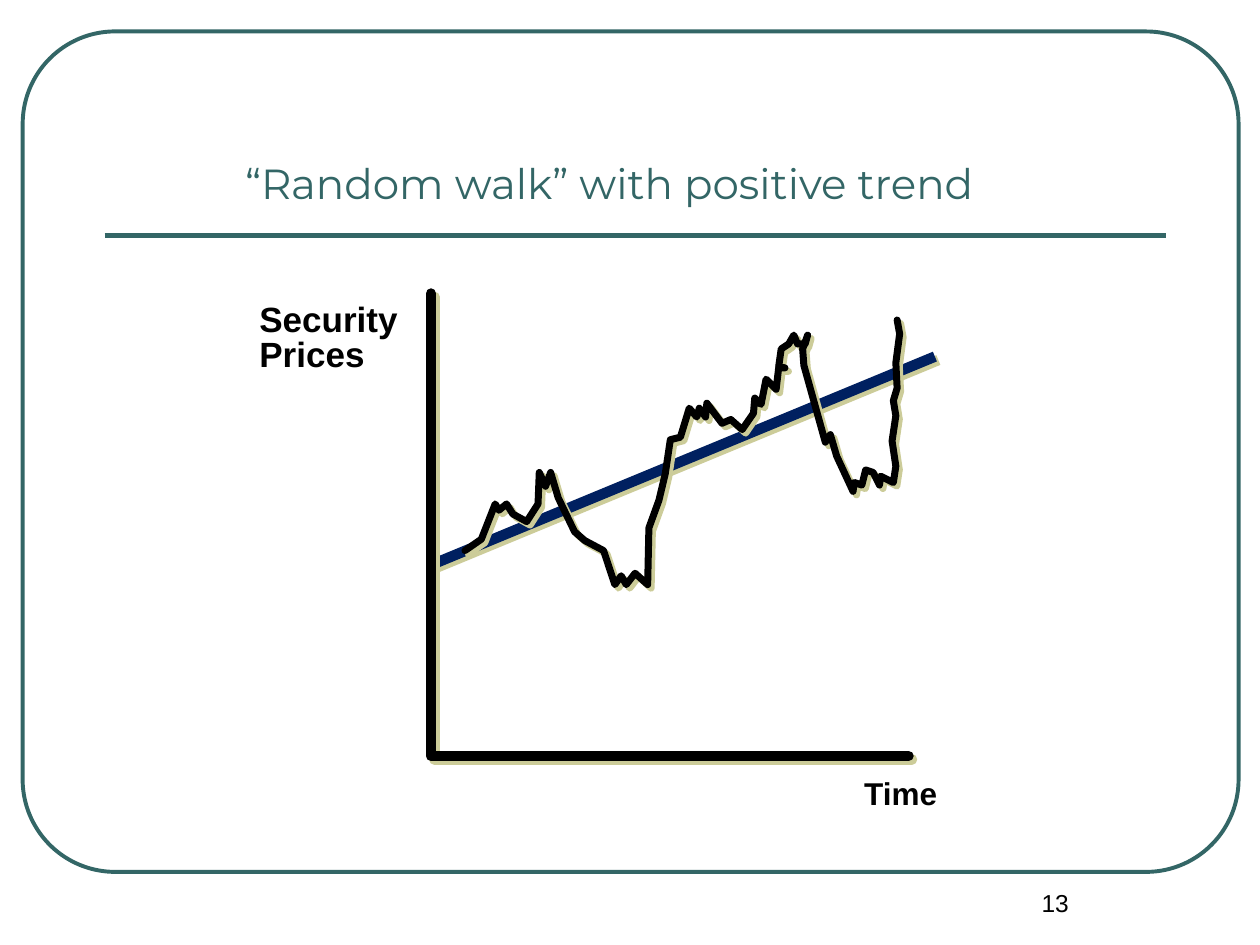
from lxml import etree
from pptx import Presentation
from pptx.dml.color import RGBColor
from pptx.enum.shapes import MSO_CONNECTOR, MSO_SHAPE
from pptx.enum.text import MSO_ANCHOR, PP_ALIGN
from pptx.oxml.ns import qn
from pptx.util import Inches, Pt

ROUND = MSO_SHAPE.ROUNDED_RECTANGLE
STRAIGHT = MSO_CONNECTOR.STRAIGHT
LEFT, CENTER = PP_ALIGN.LEFT, PP_ALIGN.CENTER
TOP, MIDDLE = MSO_ANCHOR.TOP, MSO_ANCHOR.MIDDLE

COLORS = {"teal": "336666", "navy": "002060", "black": "000000", "shade": "CCCC99"}

# Turning points, in hundredths of an inch from the slide corner
PRICES = [
    (369, 437), (382, 428), (393, 400), (396, 405), (402, 400), (407, 408),
    (418, 414), (427, 400), (428, 375), (433, 386), (437, 375), (443, 395),
    (456, 422), (464, 429), (479, 437), (488, 464), (493, 457), (497, 464),
    (504, 455), (514, 464), (515, 419), (523, 397), (528, 376), (532, 349),
    (540, 347), (547, 324), (553, 331), (555, 324), (560, 331), (561, 320),
    (573, 336), (580, 333), (589, 341), (598, 328), (599, 316), (604, 321),
    (608, 301), (616, 309), (618, 292), (623, 292), (618, 291), (620, 277),
    (626, 273), (630, 266), (633, 273), (639, 273), (641, 266), (637, 277),
    (638, 290), (655, 351), (659, 345), (664, 362), (677, 390), (678, 383),
    (684, 385), (687, 373), (693, 375), (698, 385), (699, 378), (709, 383),
    (711, 370), (708, 350), (711, 330), (709, 318), (712, 308), (711, 288),
    (714, 265), (712, 254),
]
AXES = [(342, 233), (342, 600), (721, 600)]


def stroke(shape, color, width, shade=False, bend=False):
    """Set the line, with an optional offset shadow and round ends and joins."""
    shape.line.color.rgb = RGBColor.from_string(COLORS[color])
    shape.line.width = Pt(width)
    props = shape._element.spPr
    if bend:
        line = props.find(qn("a:ln"))
        line.set("cap", "rnd")
        etree.SubElement(line, qn("a:round"))
    effects = etree.SubElement(props, qn("a:effectLst"))
    if shade:
        shadow = etree.SubElement(effects, qn("a:outerShdw"), dist=str(Pt(2.8)),
                                  dir="2700000", algn="ctr", rotWithShape="0")
        etree.SubElement(shadow, qn("a:srgbClr"), val=COLORS["shade"])


def label(box, lines, form, color="black", align=LEFT, anchor=TOP, wrap=True, space=1.0):
    """Add a text box with one paragraph per line."""
    frame = shapes.add_textbox(*map(Inches, box)).text_frame
    frame.word_wrap = wrap
    frame.vertical_anchor = anchor
    frame.text = "\n".join(lines)
    for para in frame.paragraphs:
        para.alignment = align
        para.line_spacing = space
        font = para.runs[0].font
        font.color.rgb = RGBColor.from_string(COLORS[color])
        for name, value in form.items():
            setattr(font, name, value)


deck = Presentation()
deck.slide_width, deck.slide_height = Inches(10), Inches(7.5)
shapes = deck.slides.add_slide(deck.slide_layouts[6]).shapes

# Frame and title rule
border = shapes.add_shape(ROUND, *map(Inches, (0.18, 0.25, 9.65, 6.67)))
border.adjustments[0] = 0.11
border.fill.background()
stroke(border, "teal", 2.25)
rule = shapes.add_connector(STRAIGHT, *map(Inches, (0.83, 1.87, 9.25, 1.87)))
stroke(rule, "teal", 3)

# Title, page number and axis names
label((7.5, 7, 1.75, 0.5), ["13"], {"name": "Arial", "size": Pt(14)}, align=CENTER)
label((1, 1.2, 7.67, 0.5), ["“Random walk” with positive trend"],
      {"name": "Montserrat", "size": Pt(24)}, "teal", CENTER, MIDDLE)
label((1.96, 2.36, 1.38, 0.67), ["Security", "Prices"],
      {"name": "Arial", "size": Pt(20), "bold": True}, wrap=False, space=0.85)
label((6.76, 6.09, 0.78, 0.4), ["Time"],
      {"name": "Arial", "size": Pt(18), "bold": True}, wrap=False)

# Trend, prices and axes
trend = shapes.add_connector(STRAIGHT, *map(Inches, (3.43, 4.48, 7.42, 2.83)))
stroke(trend, "navy", 6, shade=True)
for points, width in ((PRICES, 4), (AXES, 6)):
    pen = shapes.build_freeform(*points[0], scale=Inches(0.01))
    pen.add_line_segments(points[1:], close=False)
    curve = pen.convert_to_shape()
    curve.fill.background()
    stroke(curve, "black", width, shade=True, bend=True)

deck.save("out.pptx")
